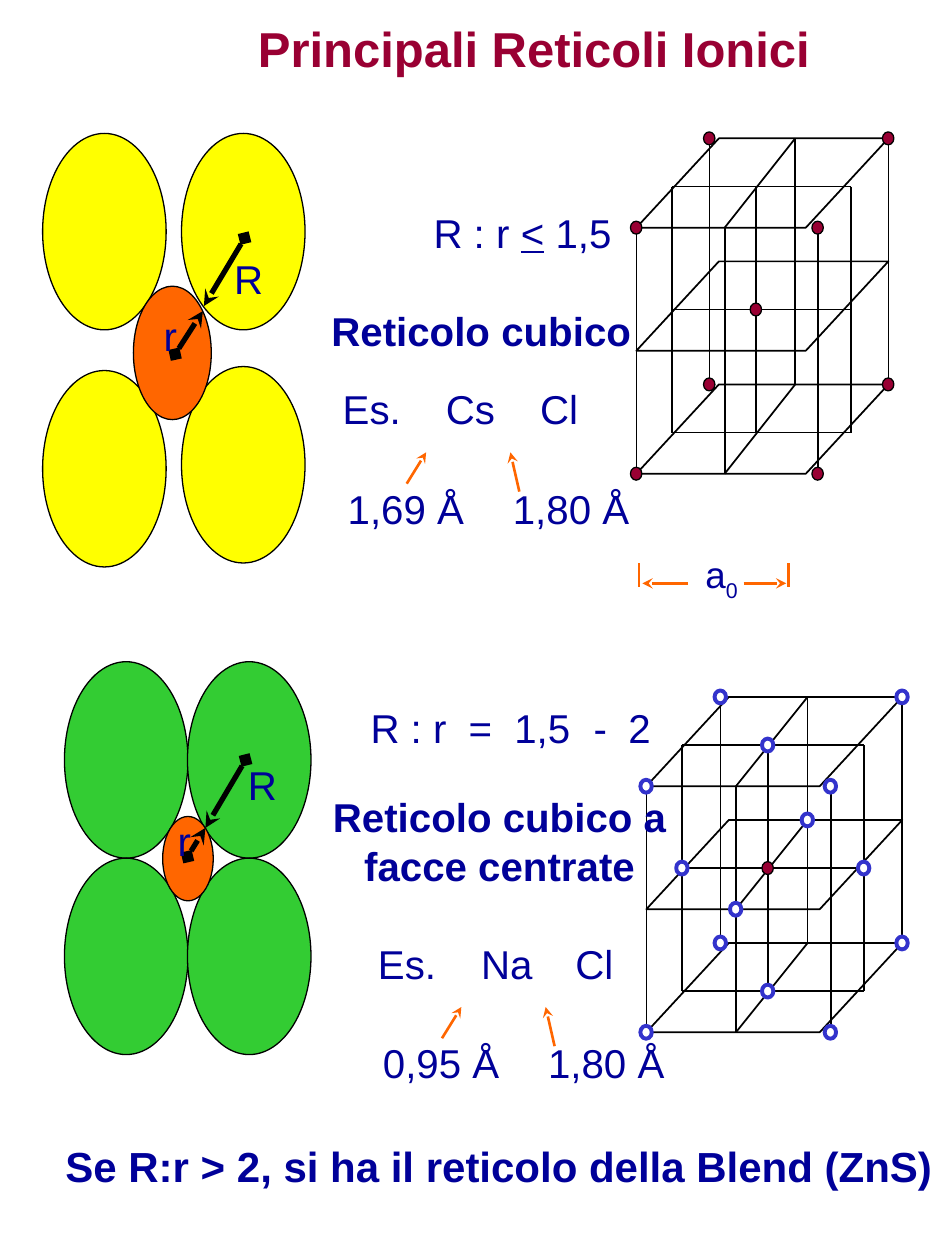
from itertools import product

from lxml import etree
from pptx import Presentation
from pptx import util as u
from pptx.dml.color import RGBColor
from pptx.enum import shapes, text
from pptx.oxml.ns import qn

COLORS = {
    "text": "000099", "title": "990033", "outline": "000000", "arrow": "FF6600",
    "cation": "FF6600", "yellow": "FFFF00", "green": "33CC33",
    "dark": "990033", "ring": "3333CC", "white": "FFFFFF",
}
ROWS = ((1.8, (0, 0.35, 0.72)), (0.97, (0.14, 0.475, 0.85)), (0, (0.29, 0.63, 1)))
LEVEL_GAP = 2.48
ION = (2.49, 3.96)


def color(name):
    return RGBColor.from_string(COLORS[name])


class Drawing:
    font = "Arial"
    size = 23

    def __init__(self, slide):
        self.slide = slide
        self.shapes = slide.shapes

    def format_text(self, shape, lines, size, bold, ink, align, stops=()):
        frame = shape.text_frame
        frame.margin_left = frame.margin_right = u.Cm(0.15)
        frame.margin_top = frame.margin_bottom = u.Cm(0.08)
        frame.word_wrap = bool(stops)
        frame.auto_size = text.MSO_AUTO_SIZE.NONE
        frame.vertical_anchor = text.MSO_ANCHOR.TOP
        for index, runs in enumerate(lines):
            paragraph = frame.paragraphs[0] if index == 0 else frame.add_paragraph()
            paragraph.alignment = align
            if stops:
                tabs = etree.SubElement(paragraph._p.get_or_add_pPr(), qn("a:tabLst"))
                for stop in stops:
                    etree.SubElement(tabs, qn("a:tab"), pos=str(u.Cm(stop)), algn="l")
            font = paragraph.font
            font.name, font.size, font.bold = self.font, u.Pt(size), bold
            font.color.rgb = color(ink)
            for words in runs:
                paragraph.add_run().text = words
        return frame

    def title(self, left, top, width, height, words):
        shape = self.slide.shapes.title
        shape.left, shape.top = u.Cm(left), u.Cm(top)
        shape.width, shape.height = u.Cm(width), u.Cm(height)
        self.format_text(shape, [[words]], 28, True, "title", text.PP_ALIGN.LEFT)

    def label(self, left, top, width, *lines, height=1.14, size=size, bold=False,
              align=text.PP_ALIGN.LEFT, stops=()):
        box = self.shapes.add_textbox(u.Cm(left), u.Cm(top), u.Cm(width), u.Cm(height))
        return self.format_text(box, lines, size, bold, "text", align, stops)

    def outline(self, kind, left, top, width, height, fill=None, line="outline", weight=0.75):
        shape = self.shapes.add_shape(kind, u.Cm(left), u.Cm(top), u.Cm(width), u.Cm(height))
        shape.shadow.inherit = False
        if fill:
            shape.fill.solid()
            shape.fill.fore_color.rgb = color(fill)
        else:
            shape.fill.background()
        shape.line.color.rgb = color(line)
        shape.line.width = u.Pt(weight)
        return shape

    def ellipse(self, left, top, width, height, fill, **style):
        return self.outline(shapes.MSO_SHAPE.OVAL, left, top, width, height, fill, **style)

    def line(self, start, end, ink="outline", weight=1, head=None, tail=None):
        connector = self.shapes.add_connector(
            shapes.MSO_CONNECTOR.STRAIGHT, *(u.Cm(value) for value in (*start, *end)))
        connector.line.color.rgb = color(ink)
        connector.line.width = u.Pt(weight)
        properties = connector._element.spPr
        for tag, kind in (("a:headEnd", head), ("a:tailEnd", tail)):
            if kind:
                etree.SubElement(properties.find(qn("a:ln")), qn(tag), type=kind)
        etree.SubElement(properties, qn("a:effectLst"))

    def pointer(self, start, end):
        self.line(start, end, "arrow", 1.5, tail="stealth")

    def radius(self, center, contact, name, left, top, width):
        self.line(center, contact, weight=3, head="diamond", tail="stealth")
        self.label(left, top, width, [name])

    def example(self, left, top, ions, radii):
        self.label(left, top, 5.4, ["\t".join(("Es.", *ions))], stops=(2.08, 3.98))
        for offset, value in zip((0.1, 3.43), radii):
            self.label(left + offset, top + 2.01, 2.69, [value])
        self.pointer((left + 1.44, top + 2.08), (left + 1.83, top + 1.45))
        self.pointer((left + 3.71, top + 2.24), (left + 3.53, top + 1.45))

    def lattice(self, left, top, width, diagonal_levels, nodes):
        def point(row, column, level):
            depth, columns = ROWS[row]
            return left + columns[column] * width, top + depth + level * LEVEL_GAP

        self.shapes = self.slide.shapes.add_group_shape().shapes
        for level in range(3):
            plane = self.outline(shapes.MSO_SHAPE.PARALLELOGRAM, left,
                                 top + level * LEVEL_GAP, width, 1.8, weight=1)
            plane.adjustments[0] = 0.924
            self.line(point(1, 0, level), point(1, 2, level))
        for row, column in product(range(3), repeat=2):
            self.line(point(row, column, 0), point(row, column, 2))
        for level in diagonal_levels:
            self.line(point(0, 1, level), point(2, 1, level))
        for position in product(range(3), repeat=3):
            style = nodes.get(position.count(1))
            if style:
                x, y = point(*position)
                self.ellipse(x - 0.12, y - 0.13, 0.23, 0.26, **style)
        self.shapes = self.slide.shapes


def main():
    presentation = Presentation()
    presentation.slide_width, presentation.slide_height = u.Cm(19.05), u.Cm(25.4)
    drawing = Drawing(presentation.slides.add_slide(presentation.slide_layouts[5]))
    drawing.title(5.05, 0.3, 11.56, 1.35, "Principali Reticoli Ionici")

    for left, top in ((0.86, 2.69), (3.66, 2.69), (0.86, 7.47), (3.66, 7.39)):
        drawing.ellipse(left, top, *ION, "yellow")
    for left, top in product((1.3, 3.78), (13.34, 17.3)):
        drawing.ellipse(left, top, *ION, "green")
    drawing.ellipse(3.28, 16.46, 1.02, 1.7, "cation")
    drawing.ellipse(2.69, 5.77, 1.57, 2.69, "cation")

    drawing.radius((3.53, 7.14), (4.09, 6.27), "r", 3.15, 6.2, 0.58)
    drawing.radius((4.93, 4.8), (4.11, 6.17), "R", 4.57, 5.05, 0.89)
    drawing.radius((3.78, 17.27), (4.14, 16.69), "r", 3.43, 16.38, 0.58)
    drawing.radius((4.95, 15.32), (4.14, 16.69), "R", 4.85, 15.24, 0.89)

    dark = {"fill": "dark"}
    ring = {"fill": "white", "line": "ring", "weight": 2.25}
    drawing.lattice(12.83, 2.79, 5.08, (0, 2), {0: dark, 3: dark})
    drawing.lattice(13.03, 14.05, 5.16, (0, 1, 2), {0: ring, 2: ring, 3: dark})

    ratio = drawing.label(8.59, 4.11, 3.91, ["R : r ", "<", " 1,5"])
    ratio.paragraphs[0].runs[1].font.underline = True
    drawing.label(6.53, 6.1, 6.4, ["Reticolo cubico"], bold=True)
    drawing.example(6.76, 7.67, ("Cs", "Cl"), ("1,69 Å", "1,80 Å"))

    for x in (12.88, 15.9):
        drawing.line((x, 11.35), (x, 11.84), "arrow", 1.5)
    edge = drawing.label(14.07, 11.05, 0.99, ["a", "0"], height=1.04, size=21)
    edge.paragraphs[0].runs[1]._r.get_or_add_rPr().set("baseline", "-25000")
    drawing.pointer((13.87, 11.76), (12.95, 11.76))
    drawing.pointer((14.99, 11.76), (15.85, 11.76))

    drawing.label(7.32, 14.1, 6.2, ["R : r\t=\t1,5\t-\t2"], stops=(1.98, 2.9, 4.5, 5.2))
    drawing.label(6.53, 15.9, 7.09, ["Reticolo cubico a"], ["facce centrate"],
                  height=2.11, bold=True, align=text.PP_ALIGN.CENTER)
    drawing.example(7.47, 18.85, ("Na", "Cl"), ("0,95 Å", "1,80 Å"))
    drawing.label(1.17, 22.91, 17.96, ["Se R:r > 2, si ha il reticolo della Blend (ZnS)"],
                  height=1.17, size=24, bold=True)
    presentation.save("out.pptx")


if __name__ == "__main__":
    main()
